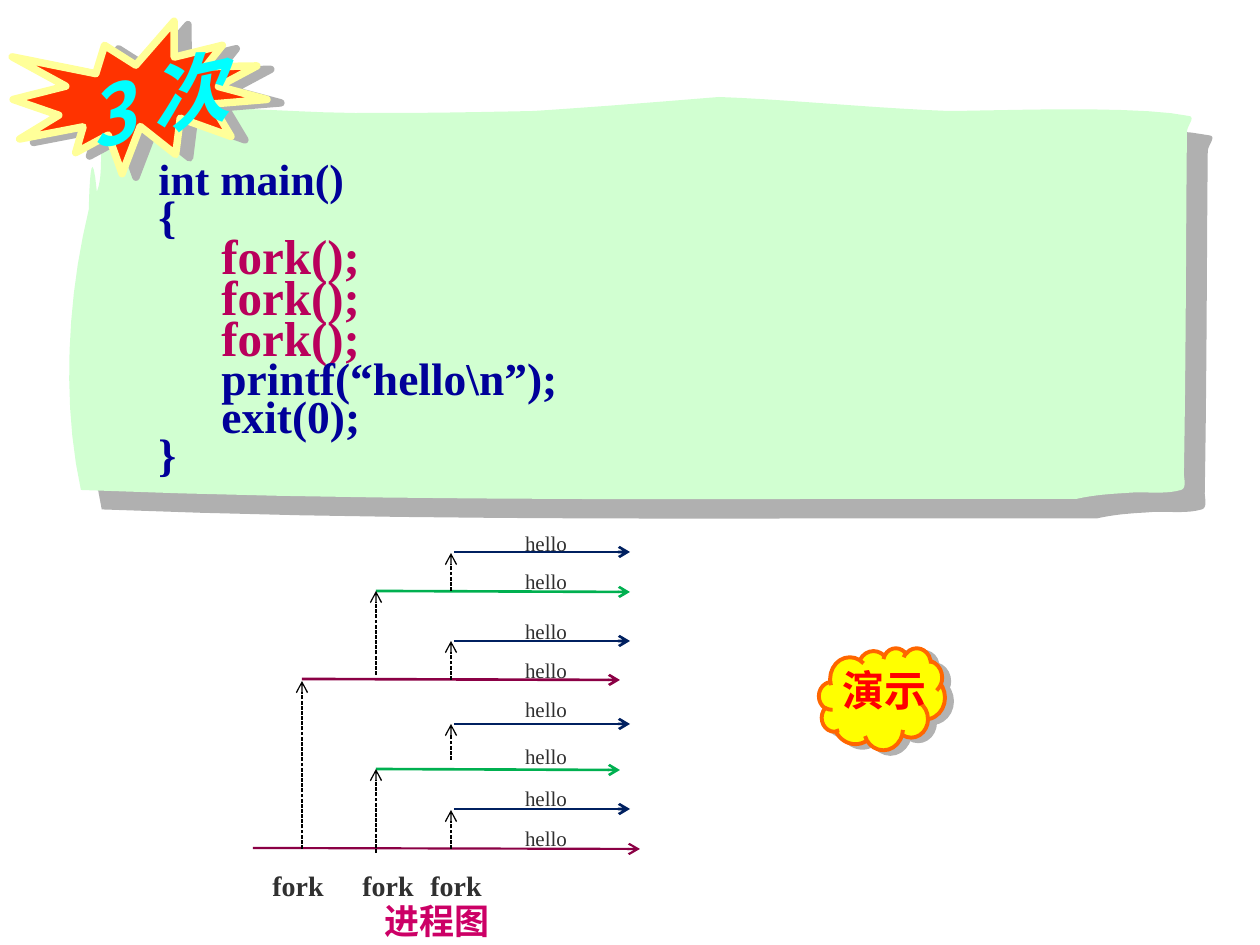
"""Builds the slide on calling fork three times, with code and a process diagram."""
import pptx
import pptx.dml.color
import pptx.enum.dml
import pptx.enum.shapes
import pptx.enum.text
import pptx.oxml
import pptx.oxml.ns
import pptx.util

RGB = pptx.dml.color.RGBColor
SHAPE = pptx.enum.shapes.MSO_SHAPE
ALIGN = pptx.enum.text.PP_ALIGN
DASH = pptx.enum.dml.MSO_LINE.SQUARE_DOT
PX = 914400 / 126
SERIF, SANS = "Times New Roman", "Noto Sans CJK JP"

MINT, RED, CREAM = RGB(209, 255, 209), RGB(255, 51, 0), RGB(255, 255, 153)
YELLOW, ORANGE, CYAN = RGB(255, 255, 0), RGB(255, 102, 0), RGB(0, 255, 255)
BLUE, ROSE, PINK = RGB(0, 0, 153), RGB(185, 0, 92), RGB(204, 0, 102)
NAVY, GREEN, WINE = RGB(0, 32, 96), RGB(0, 176, 80), RGB(139, 0, 69)
PURE_RED, BLACK, GREY = RGB(255, 0, 0), RGB(0, 0, 0), RGB(48, 48, 48)

PAPER_START = (102, 120)
PAPER_CURVES = [
    (197, 97, 272, 115, 389, 113), (437, 113, 486, 112, 534, 111),
    (596, 107, 658, 102, 719, 97), (795, 100, 871, 108, 948, 111),
    (990, 111, 1138, 105, 1189, 116), (1196, 117, 1187, 126, 1187, 132),
    (1186, 246, 1186, 360, 1184, 474), (1184, 479, 1187, 488, 1181, 490),
    (1164, 495, 1144, 491, 1126, 493), (1109, 494, 1094, 495, 1076, 499),
    (736, 498, 413, 503, 81, 490), (62, 403, 67, 299, 89, 209),
    (89, 197, 91, 132, 97, 192), (105, 170, 97, 147, 106, 127),
    (102, 111, 102, 110, 102, 120),
]
CODE = [
    ("int main()", 25, BLUE), ("{", 26, BLUE),
    ("\tfork();", 28, ROSE), ("\tfork();", 28, ROSE), ("\tfork();", 28, ROSE),
    ("\tprintf(“hello\\n”);", 26, BLUE), ("\texit(0);", 26, BLUE), ("}", 26, BLUE),
]
PROCESSES = [
    (253, 848, 640, 849, WINE, 1.25), (302, 679, 620, 680, WINE, 1.5),
    (376, 769, 620, 770, GREEN, 1.5), (376, 591, 630, 592, GREEN, 1.5),
] + [(454, y, 630, y, NAVY, 1.5) for y in (552, 641, 724, 809)]
FORKS = [
    (302, 849, 681), (376, 853, 769), (376, 675, 591),
    (451, 591, 553), (451, 680, 641), (451, 760, 724), (451, 849, 810),
]
HELLO_TOPS = (524, 562, 612, 651, 690, 737, 779, 819)
FORK_LEFTS = (243, 333, 401)


def emu(*values):
    return [round(v * PX) for v in values]


def shadow(parent, color, dist, angle):
    return pptx.oxml.parse_xml(
        f'<a:effectLst {pptx.oxml.ns.nsdecls("a")}><a:outerShdw blurRad="0" '
        f'dist="{round(dist * 12700)}" dir="{angle * 60000}" algn="ctr" rotWithShape="0">'
        f'<a:srgbClr val="{color}"/></a:outerShdw></a:effectLst>')


def style(s, fill, line, width, shade):
    s.shadow.inherit = False
    s.fill.solid()
    s.fill.fore_color.rgb = fill
    if line is None:
        s.line.fill.background()
    else:
        s.line.color.rgb = line
        s.line.width = pptx.util.Pt(width)
    empty = s.element.spPr.find(pptx.oxml.ns.qn("a:effectLst"))
    s.element.spPr.replace(empty, shadow(s, *shade))


def add_run(p, text, size, color, font=SERIF, shaded=False, **fmt):
    r = p.add_run()
    r.text = text
    r.font.color.rgb = color
    for name, value in {"size": pptx.util.Pt(size), "name": font, **fmt}.items():
        setattr(r.font, name, value)
    latin = r.font._element.find(pptx.oxml.ns.qn("a:latin"))
    latin.addnext(pptx.oxml.parse_xml(
        f'<a:ea {pptx.oxml.ns.nsdecls("a")} typeface="{SANS}"/>'))
    if shaded:
        latin.addprevious(shadow(r, "000000", 2, 45))


def add_box(slide, box, wrap=True, rotation=0):
    s = slide.shapes.add_textbox(*emu(*box))
    s.rotation = rotation
    tf = s.text_frame
    tf.word_wrap = wrap
    tf.auto_size = pptx.enum.text.MSO_AUTO_SIZE.SHAPE_TO_FIT_TEXT
    return tf


def add_label(slide, box, *run, wrap=True, rotation=0, **fmt):
    p = add_box(slide, box, wrap, rotation).paragraphs[0]
    p.alignment = ALIGN.CENTER
    add_run(p, *run, **fmt)


def add_arrow(slide, x0, y0, x1, y1, color, width, dash=None):
    s = slide.shapes.add_connector(
        pptx.enum.shapes.MSO_CONNECTOR.STRAIGHT, *emu(x0, y0, x1, y1))
    s.line.color.rgb = color
    s.line.width = pptx.util.Pt(width)
    if dash:
        s.line.dash_style = dash
    ns = pptx.oxml.ns.nsdecls("a")
    s.line._get_or_add_ln().append(pptx.oxml.parse_xml(f'<a:tailEnd {ns} type="arrow"/>'))
    s.element.spPr.append(pptx.oxml.parse_xml(f"<a:effectLst {ns}/>"))


def curve_points(start, curves, steps=10):
    x0, y0 = start
    for x1, y1, x2, y2, x3, y3 in curves:
        for i in range(1, steps + 1):
            t = i / steps
            u = 1 - t
            weights = (u ** 3, 3 * u * u * t, 3 * u * t * t, t ** 3)
            yield tuple(emu(*(sum(w * v for w, v in zip(weights, axis))
                              for axis in ((x0, x1, x2, x3), (y0, y1, y2, y3)))))
        x0, y0 = x3, y3


def add_code(slide):
    builder = slide.shapes.build_freeform(*emu(*PAPER_START))
    builder.add_line_segments(list(curve_points(PAPER_START, PAPER_CURVES)))
    style(builder.convert_to_shape(), MINT, None, 0, ("B0B0B0", 16.3, 43))
    tf = add_box(slide, (146, 160, 1040, 329))
    for i, line in enumerate(CODE):
        p = tf.add_paragraph() if i else tf.paragraphs[0]
        p.line_spacing = 0.7
        add_run(p, *line, bold=True)


def add_badges(slide):
    s = slide.shapes.add_shape(SHAPE.EXPLOSION1, *emu(14, 26, 252, 145))
    s.rotation = 352.9
    style(s, RED, CREAM, 4.25, ("B0B0B0", 8.2, 14))
    slanted = {"font": SANS, "bold": True, "italic": True, "shaded": True}
    add_label(slide, (74, 60, 71, 108), "3", 45, CYAN, wrap=False, rotation=343.7, **slanted)
    add_label(slide, (135, 42, 60, 108), "次", 45, CYAN, rotation=347.6, **slanted)
    s = slide.shapes.add_shape(SHAPE.CLOUD, *emu(819, 648, 126, 102))
    style(s, YELLOW, ORANGE, 2.25, ("B2B2B2", 4.5, 27))
    add_label(slide, (829, 658, 111, 64), "演示", 24, PURE_RED,
              wrap=False, bold=True, shaded=True)


def add_diagram(slide):
    add_label(slide, (253, 893, 368, 55), "进程图", 20, PINK, bold=True, shaded=True)
    for process in PROCESSES:
        add_arrow(slide, *process)
    for x, bottom, top in FORKS:
        add_arrow(slide, x, bottom, x, top, BLACK, 0.75, DASH)
    for top in HELLO_TOPS:
        add_label(slide, (491, top, 110, 38), "hello", 12, GREY)
    for left in FORK_LEFTS:
        add_label(slide, (left, 862, 110, 47), "fork", 16, GREY, bold=True)


def main():
    prs = pptx.Presentation()
    prs.slide_width, prs.slide_height = emu(1260, 945)
    slide = prs.slides.add_slide(prs.slide_layouts[6])
    add_code(slide)
    add_badges(slide)
    add_diagram(slide)
    prs.save("out.pptx")


if __name__ == "__main__":
    main()
